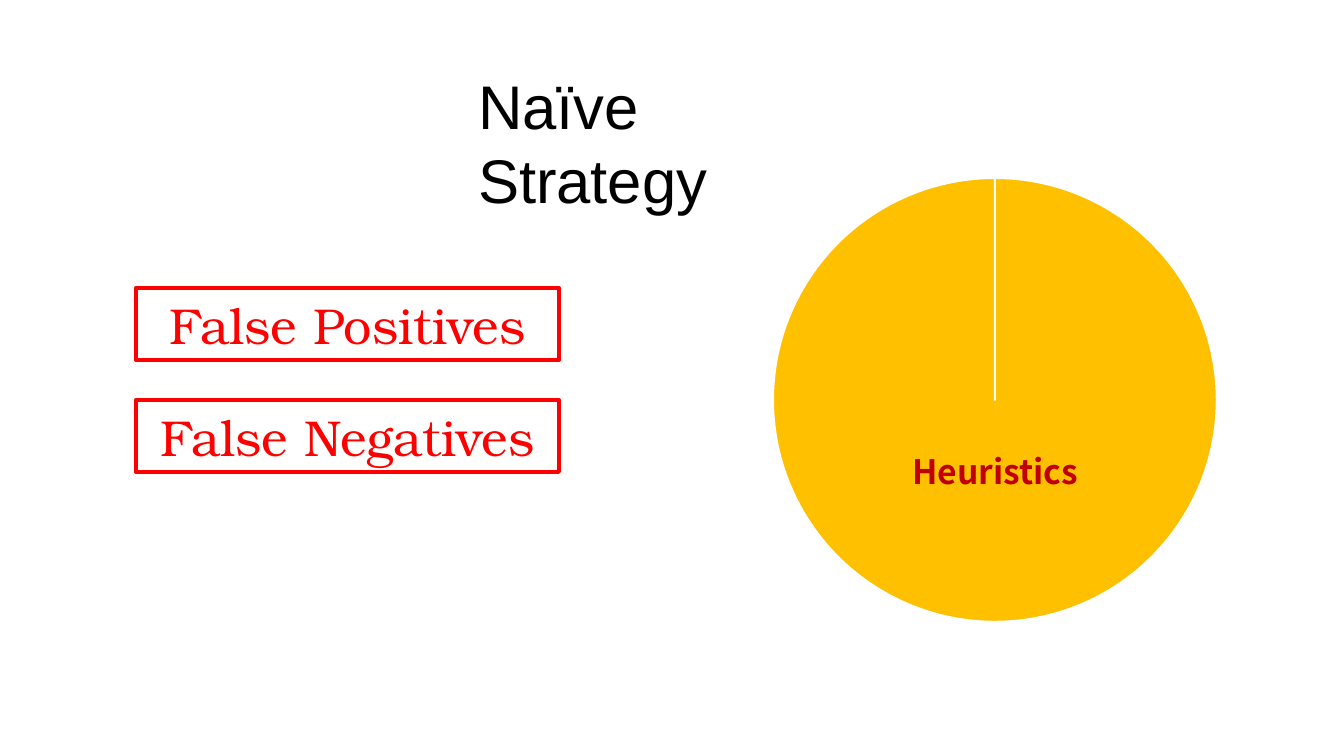
from lxml import etree
from pptx import Presentation
from pptx.chart.data import CategoryChartData
from pptx.dml.color import RGBColor
from pptx.enum.chart import XL_CHART_TYPE
from pptx.enum.shapes import MSO_SHAPE
from pptx.enum.text import MSO_ANCHOR, PP_ALIGN
from pptx.oxml.ns import qn
from pptx.util import Emu, Pt

PIE, RECTANGLE = XL_CHART_TYPE.PIE, MSO_SHAPE.RECTANGLE
TOP, MIDDLE = MSO_ANCHOR.TOP, MSO_ANCHOR.MIDDLE
LEFT, CENTER = PP_ALIGN.LEFT, PP_ALIGN.CENTER
PX = 9071  # EMU per px at 100.8 px to the inch

# Content
TITLE = "Naïve Strategy"
ERRORS = ["False Positives", "False Negatives"]
CATEGORIES, SERIES, VALUES = ["1"], "Series 1", [100]
PIE_LABEL = "Heuristics"

# Layout in px: left, top, width, height
TITLE_AREA = (468, 63, 409, 85)
ERROR_BOX = (136, 288, 423, 72)
ERROR_STEP = 112
CHART_AREA = (754, 163, 482, 474)
PIE_AREA = (773, 178, 444, 444)
LABEL_AREA = (892, 446, 206, 50)

# Text formats
TITLE_FONT = {"name": "Arial", "size": Pt(44), "bold": False}
ERROR_FONT = {"name": "TeX Gyre Bonum", "size": Pt(36), "bold": False}
LABEL_FONT = {"name": "Noto Sans CJK SC", "size": Pt(24), "bold": True}
CHART_FONT = {"name": "Noto Sans CJK SC", "size": Pt(10)}


def color(value):
    return RGBColor.from_string(value)


def scaled(area):
    return [Emu(length * PX) for length in area]


def format_font(font, values, hex_color):
    for name, value in values.items():
        setattr(font, name, value)
    font.color.rgb = color(hex_color)


def write(shape, text, values, hex_color, align, anchor):
    frame = shape.text_frame
    frame.word_wrap = True
    frame.vertical_anchor = anchor
    for side in ("left", "right"):
        setattr(frame, f"margin_{side}", Emu(91440))
    for side in ("top", "bottom"):
        setattr(frame, f"margin_{side}", Emu(45720))
    para = frame.paragraphs[0]
    para.alignment = align
    span = para.add_run()
    span.text = text
    format_font(span.font, values, hex_color)
    return para


deck = Presentation()
deck.slide_width, deck.slide_height = Emu(12192000), Emu(6858000)
page = deck.slides.add_slide(deck.slide_layouts[5])

# Title
title = page.shapes.title
title.left, title.top, title.width, title.height = scaled(TITLE_AREA)
title_para = write(title, TITLE, TITLE_FONT, "000000", LEFT, TOP)
title_para.space_before = Pt(0)

# Outlined error boxes
left, top, width, height = ERROR_BOX
for row, name in enumerate(ERRORS):
    area = scaled((left, top + row * ERROR_STEP, width, height))
    box = page.shapes.add_shape(RECTANGLE, *area)
    box.shadow.inherit = False
    box.fill.background()
    box.line.color.rgb = color("FF0000")
    box.line.width = Pt(3)
    write(box, name, ERROR_FONT, "FF0000", CENTER, MIDDLE)

# Pie chart
data = CategoryChartData()
data.categories = CATEGORIES
data.add_series(SERIES, VALUES)
chart = page.shapes.add_chart(PIE, *scaled(CHART_AREA), data).chart
chart.has_title = False
chart.has_legend = False
format_font(chart.font, CHART_FONT, "000000")
chart.plots[0].vary_by_categories = True
wedge = chart.plots[0].series[0].points[0].format
wedge.fill.solid()
wedge.fill.fore_color.rgb = color("FFC000")
wedge.line.color.rgb = color("FFFFFF")
wedge.line.width = Pt(1.5)

# Fixed place of the pie inside the chart area
plot_area = chart.plots[0]._element.getparent()
layout = plot_area.find(qn("c:layout"))
if layout is None:
    layout = etree.Element(qn("c:layout"))
    plot_area.insert(0, layout)
manual = etree.SubElement(layout, qn("c:manualLayout"))
chart_left, chart_top, chart_width, chart_height = CHART_AREA
pie_left, pie_top, pie_width, pie_height = PIE_AREA
settings = {
    "layoutTarget": "inner", "xMode": "edge", "yMode": "edge",
    "x": (pie_left - chart_left) / chart_width,
    "y": (pie_top - chart_top) / chart_height,
    "w": pie_width / chart_width,
    "h": pie_height / chart_height,
}
for tag, value in settings.items():
    etree.SubElement(manual, qn(f"c:{tag}")).set("val", str(value))

# Label over the pie
label = page.shapes.add_textbox(*scaled(LABEL_AREA))
write(label, PIE_LABEL, LABEL_FONT, "C00000", CENTER, TOP)

deck.save("out.pptx")
